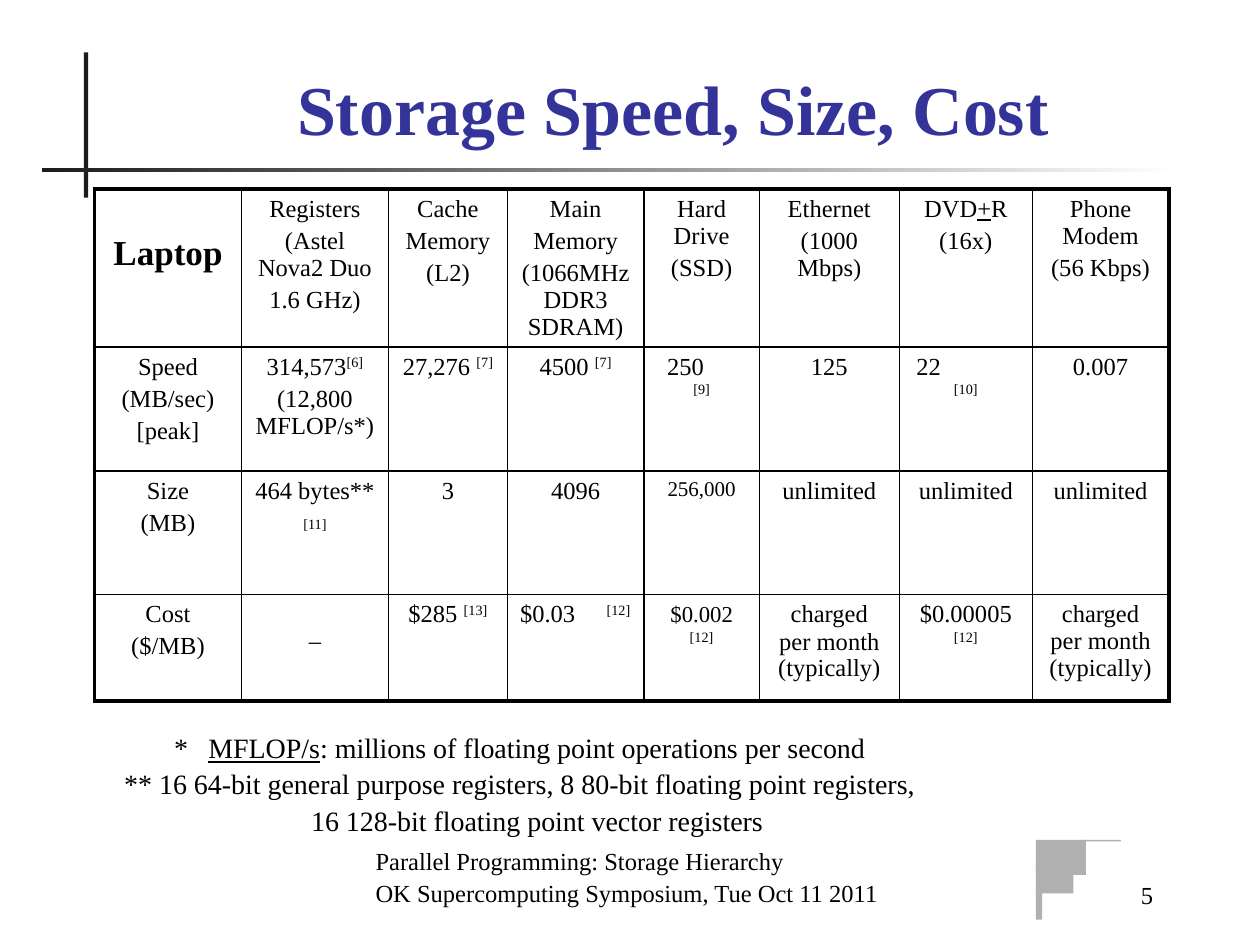
from lxml.etree import SubElement
from pptx import Presentation
from pptx.dml.color import RGBColor
from pptx.enum.shapes import MSO_SHAPE
from pptx.enum.text import MSO_ANCHOR, PP_ALIGN
from pptx.oxml.ns import qn
from pptx.util import Pt

COLORS = {"ink": "000000", "title": "333399", "rule": "1C1C1C",
          "paper": "FFFFFF", "corner": "B0B0B0"}
FONT = "Times New Roman"


def rgb(name):
    return RGBColor.from_string(COLORS[name])


def write(paragraph, text, size, color="ink", bold=False, align=PP_ALIGN.CENTER):
    """Fill a paragraph; | parts runs, ^ marks superscript, _ marks underline."""
    paragraph.alignment = align
    paragraph.font.name = FONT
    paragraph.font.size = Pt(size)
    paragraph.font.bold = bold
    paragraph.font.color.rgb = rgb(color)
    for piece in text.split("|"):
        run = paragraph.add_run()
        run.text = piece.lstrip("^_")
        if piece.startswith("^"):
            run.font._element.set("baseline", "30000")
        if piece.startswith("_"):
            run.font.underline = True


presentation = Presentation()
presentation.slide_width, presentation.slide_height = Pt(720), Pt(540)
slide = presentation.slides.add_slide(presentation.slide_layouts[6])

# Title rules and corner ornament
bars = [
    (48, 30, 2.4, 83, "rule"),
    (24, 96, 648, 2.2, "fade"),
    (592, 480, 28.5, 20, "corner"),
    (592, 492.5, 21.5, 18, "corner"),
    (592, 507.5, 3.5, 18, "corner"),
    (619, 480, 21.5, 0.8, "corner"),
]
for left, top, width, height, color in bars:
    shape = slide.shapes.add_shape(
        MSO_SHAPE.RECTANGLE, Pt(left), Pt(top), Pt(width), Pt(height))
    shape.shadow.inherit = False
    shape.line.fill.background()
    if color == "fade":
        shape.fill.gradient()
        shape.fill.gradient_angle = 0
        for stop, name in zip(shape.fill.gradient_stops, ("rule", "paper")):
            stop.color.rgb = rgb(name)
    else:
        shape.fill.solid()
        shape.fill.fore_color.rgb = rgb(color)

# Storage table: paragraphs of a cell are parted by line ends
rows = [
    ["Laptop", "Registers\n(Astel Nova2 Duo\n1.6 GHz)", "Cache\nMemory\n(L2)",
     "Main\nMemory\n(1066MHz DDR3 SDRAM)", "Hard Drive\n(SSD)",
     "Ethernet\n(1000 Mbps)", "DVD|_+|R\n(16x)", "Phone Modem\n(56 Kbps)"],
    ["Speed\n(MB/sec)\n[peak]", "314,573|^[6]\n(12,800 MFLOP/s*)", "27,276 |^[7]",
     "4500 |^[7]", "250\n^[9]", "125", "22\n^[10]", "0.007"],
    ["Size\n(MB)", "464 bytes**\n^[11]", "3", "4096", "256,000",
     "unlimited", "unlimited", "unlimited"],
    ["Cost\n($/MB)", "–", "$285 |^[13]", "$0.03\t|^[12]", "$0.002| |^[12]",
     "charged\nper month\n(typically)", "$0.00005 |^[12]",
     "charged per month (typically)"],
]
column_widths = [84, 84, 68, 78, 66, 80, 76, 78]
row_heights = [89.5, 71, 70.5, 61]
table = slide.shapes.add_table(
    len(rows), len(column_widths), Pt(54), Pt(108),
    Pt(sum(column_widths)), Pt(sum(row_heights))).table
for column, width in zip(table.columns, column_widths):
    column.width = Pt(width)
for row, height in zip(table.rows, row_heights):
    row.height = Pt(height)

last_row, last_column = len(rows) - 1, len(column_widths) - 1
for r, row in enumerate(rows):
    for c, text in enumerate(row):
        cell = table.cell(r, c)
        heading = (r, c) == (0, 0)
        size = 20 if heading else 12 if text == "256,000" else 14
        frame = cell.text_frame
        for i, line in enumerate(text.split("\n")):
            paragraph = frame.add_paragraph() if i else frame.paragraphs[0]
            if i:
                paragraph.space_before = Pt(2.8)
            write(paragraph, line, size, bold=heading)

        # Outer edges are heavier than the inner grid
        properties = cell._tc.get_or_add_tcPr()
        edges = {"a:lnL": c == 0, "a:lnR": c == last_column,
                 "a:lnT": r == 0, "a:lnB": r == last_row}
        for tag, outer in edges.items():
            border = SubElement(properties, qn(tag), w=str(Pt(2.25 if outer else 1)))
            fill = SubElement(border, qn("a:solidFill"))
            SubElement(fill, qn("a:srgbClr"), val=COLORS["ink"])
        cell.fill.background()

# Cells set apart from the rule
table.cell(0, 0).margin_top = Pt(26)
table.cell(3, 1).margin_top = Pt(19)
table.cell(2, 1).text_frame.paragraphs[1].line_spacing = 1.2
for paragraph in table.cell(3, 5).text_frame.paragraphs[1:]:
    paragraph.line_spacing = 0.8
table.cell(3, 4).text_frame.paragraphs[0].runs[0].font.size = Pt(13)
for c, indent in ((4, 6), (6, 2.5)):
    value, reference = table.cell(1, c).text_frame.paragraphs
    value.alignment = PP_ALIGN.LEFT
    value._p.get_or_add_pPr().set("marL", str(Pt(indent)))
    reference.space_before = Pt(0)
price = table.cell(3, 3).text_frame.paragraphs[0]
price.alignment = PP_ALIGN.LEFT
price_properties = price._p.get_or_add_pPr()
tab_list = price_properties.makeelement(qn("a:tabLst"))
SubElement(tab_list, qn("a:tab"), pos=str(Pt(49.5)), algn="l")
price_properties.insert(0, tab_list)

# Title, footer, slide number and footnotes
LEFT, CENTER, RIGHT = PP_ALIGN.LEFT, PP_ALIGN.CENTER, PP_ALIGN.RIGHT
BOTTOM, TOP = MSO_ANCHOR.BOTTOM, MSO_ANCHOR.TOP
# Each line: text, alignment, left margin, first-line indent
texts = [
    (78, 36, 613, 53, BOTTOM, 40, "title",
     [("Storage Speed, Size, Cost", CENTER, 0, 0)]),
    (207.5, 486, 315, 36, BOTTOM, 14, "ink",
     [("Parallel Programming: Storage Hierarchy", LEFT, 0, 0),
      ("OK Supercomputing Symposium, Tue Oct 11 2011", LEFT, 0, 0)]),
    (564, 487.5, 102, 36, BOTTOM, 14, "ink", [("5", RIGHT, 0, 0)]),
    (60, 414, 474, 65.5, TOP, 16, "ink",
     [("*\t|_MFLOP/s|: millions of floating point operations per second",
       LEFT, 52, -19.5),
      ("** 16 64-bit general purpose registers, 8 80-bit floating point registers,",
       CENTER, 0, 0),
      ("16 128-bit floating point vector registers", CENTER, 20, 0)]),
]
for left, top, width, height, anchor, size, color, lines in texts:
    box = slide.shapes.add_textbox(Pt(left), Pt(top), Pt(width), Pt(height))
    frame = box.text_frame
    frame.word_wrap = True
    frame.vertical_anchor = anchor
    for i, (text, align, margin, indent) in enumerate(lines):
        paragraph = frame.add_paragraph() if i else frame.paragraphs[0]
        if i:
            paragraph.space_before = Pt(1.5)
        write(paragraph, text, size, color, color == "title", align)
        if margin:
            properties = paragraph._p.get_or_add_pPr()
            properties.set("marL", str(Pt(margin)))
            properties.set("indent", str(Pt(indent)))

presentation.save("out.pptx")
